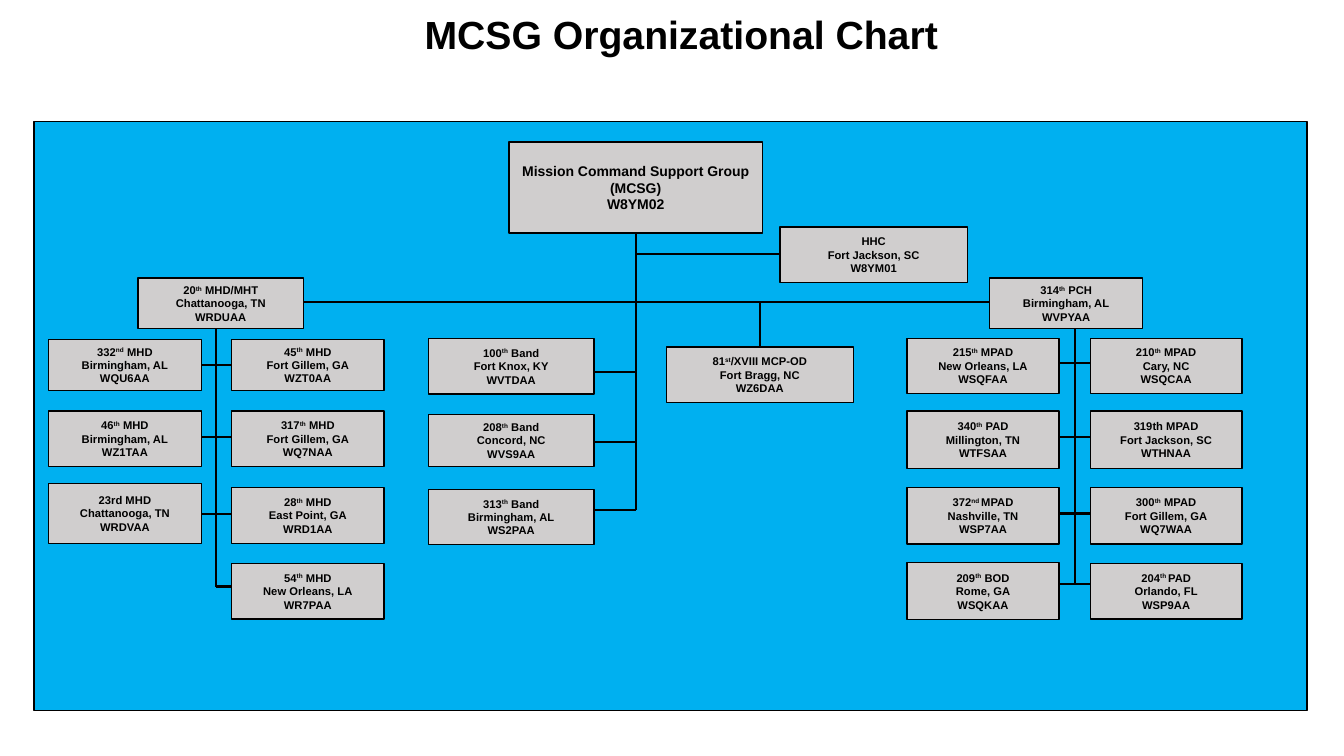
from dataclasses import dataclass
from itertools import zip_longest

from lxml import etree
from pptx import Presentation
from pptx import util as u
from pptx.dml.color import RGBColor
from pptx.enum import shapes, text
from pptx.oxml import ns


@dataclass(frozen=True)
class Theme:
    font: str = "Arial"
    ink: RGBColor = RGBColor(0x00, 0x00, 0x00)
    panel: RGBColor = RGBColor(0x00, 0xB0, 0xF0)
    unit: RGBColor = RGBColor(0xD0, 0xCE, 0xCE)
    title_size: int = 28
    group_size: int = 10
    unit_size: int = 8
    border: float = 1
    link: float = 1.5


THEME = Theme()

# All lengths are centimetres; text between carets is superscript.
TITLE = "MCSG Organizational Chart"
TITLE_BOX = (0, 0, 31.34, 1.7)
TITLE_INDENT = 3.25
PANEL = (0.86, 3.07, 32.08, 14.83)

GROUP = (("Mission Command Support Group", "(MCSG)", "W8YM02"),
         (12.83, 3.58, 6.38, 2.29))
HHC = (("HHC", "Fort Jackson, SC", "W8YM01"), (19.66, 5.72, 4.72, 1.4))
MCP = (("81^st^/XVIII MCP-OD", "Fort Bragg, NC", "WZ6DAA"),
       (16.79, 8.74, 4.72, 1.4))
MHD_HEAD = (("20^th^ MHD/MHT", "Chattanooga, TN", "WRDUAA"),
            (3.48, 7.01, 4.17, 1.27))
PCH_HEAD = (("314^th^ PCH", "Birmingham, AL", "WVPYAA"),
            (24.94, 7.01, 3.86, 1.27))

# Column: left, width, units. Unit: lines, top, height.
MHD_WEST = (1.22, 3.86, [
    (("332^nd^ MHD", "Birmingham, AL", "WQU6AA"), 8.56, 1.28),
    (("46^th^ MHD", "Birmingham, AL", "WZ1TAA"), 10.36, 1.4),
    (("23rd MHD", "Chattanooga, TN", "WRDVAA"), 12.19, 1.5),
])
MHD_EAST = (5.84, 3.84, [
    (("45^th^ MHD", "Fort Gillem, GA", "WZT0AA"), 8.56, 1.28),
    (("317^th^ MHD", "Fort Gillem, GA", "WQ7NAA"), 10.36, 1.4),
    (("28^th^ MHD", "East Point, GA", "WRD1AA"), 12.29, 1.4),
    (("54^th^ MHD", "New Orleans, LA", "WR7PAA"), 14.2, 1.4),
])
BANDS = (10.8, 4.17, [
    (("100^th^ Band", "Fort Knox, KY", "WVTDAA"), 8.53, 1.4),
    (("208^th^ Band", "Concord, NC", "WVS9AA"), 10.44, 1.32),
    (("313^th^ Band", "Birmingham, AL", "WS2PAA"), 12.34, 1.38),
])
PCH_WEST = (22.86, 3.83, [
    (("215^th^ MPAD", "New Orleans, LA", "WSQFAA"), 8.53, 1.38),
    (("340^th^ PAD", "Millington, TN", "WTFSAA"), 10.36, 1.44),
    (("372^nd ^MPAD", "Nashville, TN", "WSP7AA"), 12.29, 1.42),
    (("209^th^ BOD", "Rome, GA", "WSQKAA"), 14.18, 1.44),
])
PCH_EAST = (27.48, 3.82, [
    (("210^th^ MPAD", "Cary, NC", "WSQCAA"), 8.53, 1.38),
    (("319th MPAD", "Fort Jackson, SC", "WTHNAA"), 10.36, 1.44),
    (("300^th^ MPAD", "Fort Gillem, GA", "WQ7WAA"), 12.29, 1.42),
    (("204^th ^PAD", "Orlando, FL", "WSP9AA"), 14.2, 1.4),
])
NO_COLUMN = (0, 0, [])

# Branch: parent box, trunk x, heights of its rungs, column on either side.
BRANCHES = [
    (MHD_HEAD, 5.44, (9.2, 11.02, 12.95, 14.78), MHD_WEST, MHD_EAST),
    (GROUP, 16.03, (9.37, 11.13, 12.86), BANDS, NO_COLUMN),
    (PCH_HEAD, 27.08, (9.14, 11.02, 12.94, 14.71), PCH_WEST, PCH_EAST),
]
GROUP_TRUNK_X = BRANCHES[1][1]
HHC_LINK_Y = 6.4
CROSSBAR_Y = 7.62
MCP_LINK_X = 19.15


def style_run(run, size):
    run.font.name = THEME.font
    run.font.size = u.Pt(size)
    run.font.bold = True
    run.font.color.rgb = THEME.ink


def add_rect(slide, box, fill):
    rect = slide.shapes.add_shape(shapes.MSO_SHAPE.RECTANGLE, *map(u.Cm, box))
    rect.shadow.inherit = False
    rect.fill.solid()
    rect.fill.fore_color.rgb = fill
    rect.line.color.rgb = THEME.ink
    rect.line.width = u.Pt(THEME.border)
    return rect


def add_unit(slide, lines, box, size=THEME.unit_size):
    frame = add_rect(slide, box, THEME.unit).text_frame
    frame.word_wrap = True
    frame.vertical_anchor = text.MSO_ANCHOR.MIDDLE
    for number, line in enumerate(lines):
        paragraph = frame.add_paragraph() if number else frame.paragraphs[0]
        paragraph.alignment = text.PP_ALIGN.CENTER
        for part, words in enumerate(line.split("^")):
            run = paragraph.add_run()
            run.text = words
            style_run(run, size)
            if part % 2:
                run.font._element.set("baseline", "30000")


def add_link(slide, x1, y1, x2, y2):
    link = slide.shapes.add_connector(
        shapes.MSO_CONNECTOR.STRAIGHT, *map(u.Cm, (x1, y1, x2, y2)))
    link.line.color.rgb = THEME.ink
    link.line.width = u.Pt(THEME.link)
    etree.SubElement(link._element.spPr, ns.qn("a:effectLst"))


def add_branch_links(slide, parent, trunk, rungs, west, east):
    """Draw a trunk below the parent and a rung to each unit beside it."""
    _, (_, top, _, height) = parent
    add_link(slide, trunk, top + height, trunk, rungs[-1])
    west_left, west_width, west_units = west
    east_left, _, east_units = east
    for y, west_unit, east_unit in zip_longest(rungs, west_units, east_units):
        start = west_left + west_width if west_unit else trunk
        end = east_left if east_unit else trunk
        add_link(slide, start, y, end, y)


def add_title(slide):
    title = slide.shapes.title
    title.left, title.top, title.width, title.height = map(u.Cm, TITLE_BOX)
    frame = title.text_frame
    frame.text = TITLE
    frame.word_wrap = True
    frame.auto_size = text.MSO_AUTO_SIZE.NONE
    frame.margin_left = u.Cm(TITLE_INDENT)
    frame.vertical_anchor = text.MSO_ANCHOR.MIDDLE
    frame.paragraphs[0].alignment = text.PP_ALIGN.CENTER
    style_run(frame.paragraphs[0].runs[0], THEME.title_size)


def main():
    deck = Presentation()
    deck.slide_width, deck.slide_height = u.Cm(33.87), u.Cm(19.05)
    slide = deck.slides.add_slide(deck.slide_layouts[5])
    add_title(slide)
    add_rect(slide, PANEL, THEME.panel)

    for branch in BRANCHES:
        add_branch_links(slide, *branch)
    mhd_left, _, mhd_width, _ = MHD_HEAD[1]
    add_link(slide, mhd_left + mhd_width, CROSSBAR_Y, PCH_HEAD[1][0], CROSSBAR_Y)
    add_link(slide, GROUP_TRUNK_X, HHC_LINK_Y, HHC[1][0], HHC_LINK_Y)
    add_link(slide, MCP_LINK_X, CROSSBAR_Y, MCP_LINK_X, MCP[1][1])

    add_unit(slide, *GROUP, THEME.group_size)
    for lines, box in (HHC, MCP, MHD_HEAD, PCH_HEAD):
        add_unit(slide, lines, box)
    for left, width, units in (MHD_WEST, MHD_EAST, BANDS, PCH_WEST, PCH_EAST):
        for lines, top, height in units:
            add_unit(slide, lines, (left, top, width, height))

    deck.save("out.pptx")


if __name__ == "__main__":
    main()
